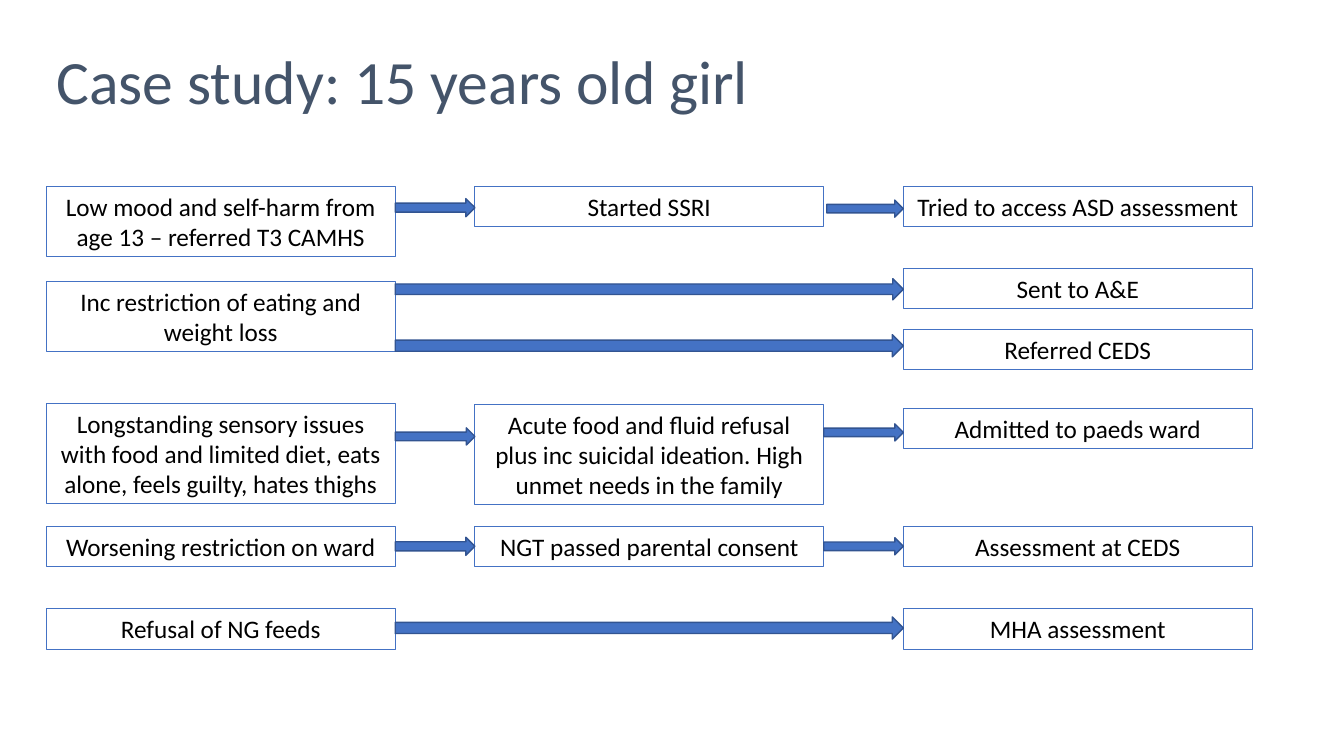
import pptx
import pptx.dml.color
import pptx.enum.shapes
import pptx.enum.text
import pptx.util
from pptx.util import Inches

COLORS = {"title": "44546A", "text": "000000", "accent": "4472C4", "edge": "325491"}
FONT = "Calibri"
LEFT, BOX_W, GAP = 0.46, 3.46, 0.79

STEPS = [
    (0, 1.85, 2, "Low mood and self-harm from age 13 – referred T3 CAMHS"),
    (1, 1.85, 1, "Started SSRI"),
    (2, 1.85, 1, "Tried to access ASD assessment"),
    (0, 2.79, 2, "Inc restriction of eating and weight loss"),
    (2, 2.66, 1, "Sent to A&E"),
    (2, 3.27, 1, "Referred CEDS"),
    (0, 4.0, 3, "Longstanding sensory issues with food and limited diet, "
                "eats alone, feels guilty, hates thighs"),
    (1, 4.01, 3, "Acute food and fluid refusal plus inc suicidal ideation. "
                 "High unmet needs in the family"),
    (2, 4.05, 1, "Admitted to paeds ward"),
    (0, 5.22, 1, "Worsening restriction on ward"),
    (1, 5.22, 1, "NGT passed parental consent"),
    (2, 5.22, 1, "Assessment at CEDS"),
    (0, 6.04, 1, "Refusal of NG feeds"),
    (2, 6.04, 1, "MHA assessment"),
]

ARROWS = [
    (0, 1, 2.06, 0.18, 0),
    (1, 2, 2.07, 0.17, 0.03),
    (0, 2, 2.87, 0.21, 0),
    (0, 2, 3.43, 0.22, 0),
    (0, 1, 4.33, 0.17, 0),
    (1, 2, 4.29, 0.17, 0),
    (0, 1, 5.42, 0.18, 0),
    (1, 2, 5.42, 0.17, 0),
    (0, 2, 6.23, 0.22, 0),
]


def rgb(name):
    return pptx.dml.color.RGBColor.from_string(COLORS[name])


def column_left(col):
    return LEFT + col * (BOX_W + GAP)


def add_run(p, text, size, color):
    r = p.add_run()
    r.text = text
    r.font.name = FONT
    r.font.size = pptx.util.Pt(size)
    r.font.color.rgb = rgb(color)


def add_title(s, text):
    sp = s.shapes.title
    sp.left, sp.top = Inches(LEFT), Inches(0.11)
    sp.width, sp.height = Inches(11.5), Inches(1.45)
    tf = sp.text_frame
    tf.word_wrap = True
    tf.vertical_anchor = pptx.enum.text.MSO_ANCHOR.MIDDLE
    p = tf.paragraphs[0]
    p.alignment = pptx.enum.text.PP_ALIGN.LEFT
    p.line_spacing = 0.9
    add_run(p, text, 44, "title")


def add_step(s, col, top, lines, text):
    sp = s.shapes.add_shape(
        pptx.enum.shapes.MSO_SHAPE.RECTANGLE, Inches(column_left(col)),
        Inches(top), Inches(BOX_W), Inches(0.1 + 0.3 * lines))
    sp.shadow.inherit = False
    sp.fill.background()
    sp.line.color.rgb = rgb("accent")
    sp.line.width = pptx.util.Pt(0.75)
    tf = sp.text_frame
    tf.word_wrap = True
    tf.auto_size = pptx.enum.text.MSO_AUTO_SIZE.SHAPE_TO_FIT_TEXT
    tf.vertical_anchor = pptx.enum.text.MSO_ANCHOR.TOP
    p = tf.paragraphs[0]
    p.alignment = pptx.enum.text.PP_ALIGN.CENTER
    add_run(p, text, 18, "text")


def add_arrow(s, start, end, middle, height, inset):
    left = column_left(start) + BOX_W + inset
    sp = s.shapes.add_shape(
        pptx.enum.shapes.MSO_SHAPE.RIGHT_ARROW, Inches(left),
        Inches(middle - height / 2), Inches(column_left(end) - left), Inches(height))
    sp.shadow.inherit = False
    sp.fill.solid()
    sp.fill.fore_color.rgb = rgb("accent")
    sp.line.color.rgb = rgb("edge")
    sp.line.width = pptx.util.Pt(1)


def main():
    """Build the case study flow slide and save it."""
    prs = pptx.Presentation()
    prs.slide_width, prs.slide_height = Inches(13.33), Inches(7.5)
    s = prs.slides.add_slide(prs.slide_layouts[5])
    add_title(s, "Case study: 15 years old girl")
    for step in STEPS:
        add_step(s, *step)
    for arrow in ARROWS:
        add_arrow(s, *arrow)
    prs.save("out.pptx")


if __name__ == "__main__":
    main()
